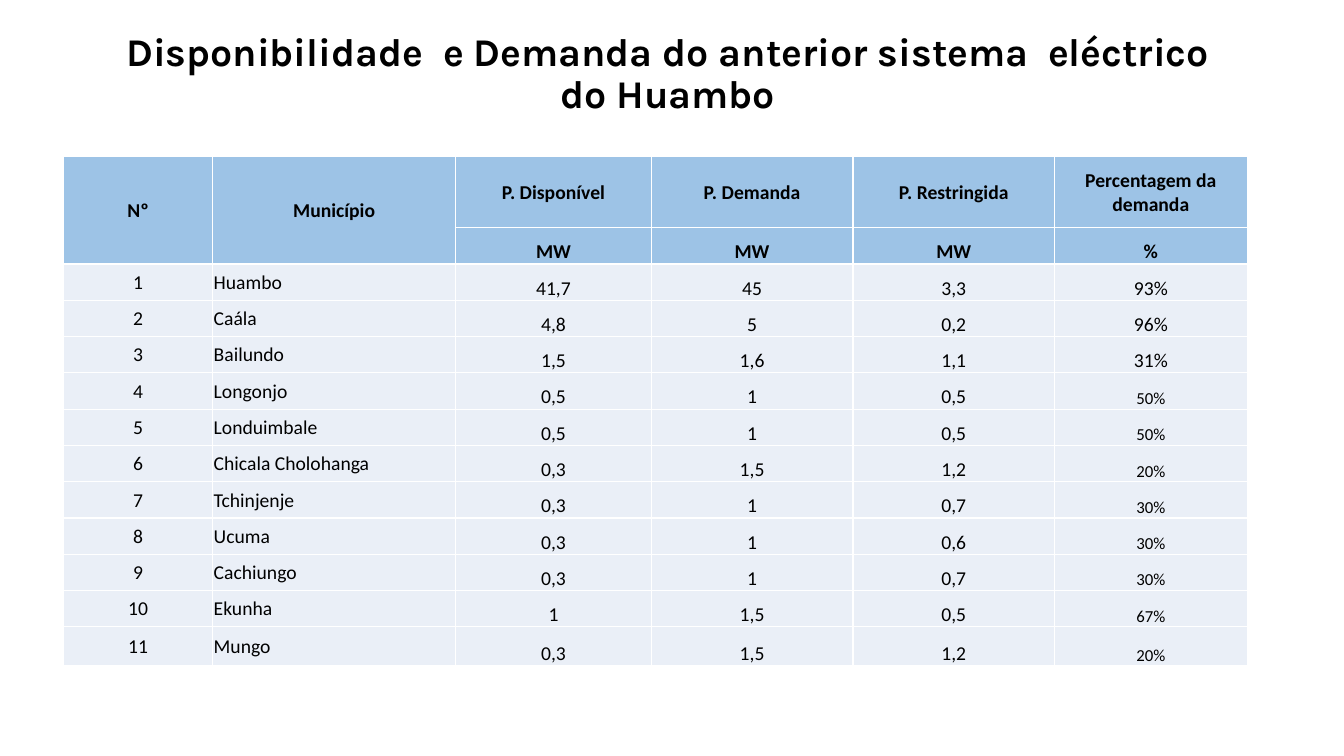
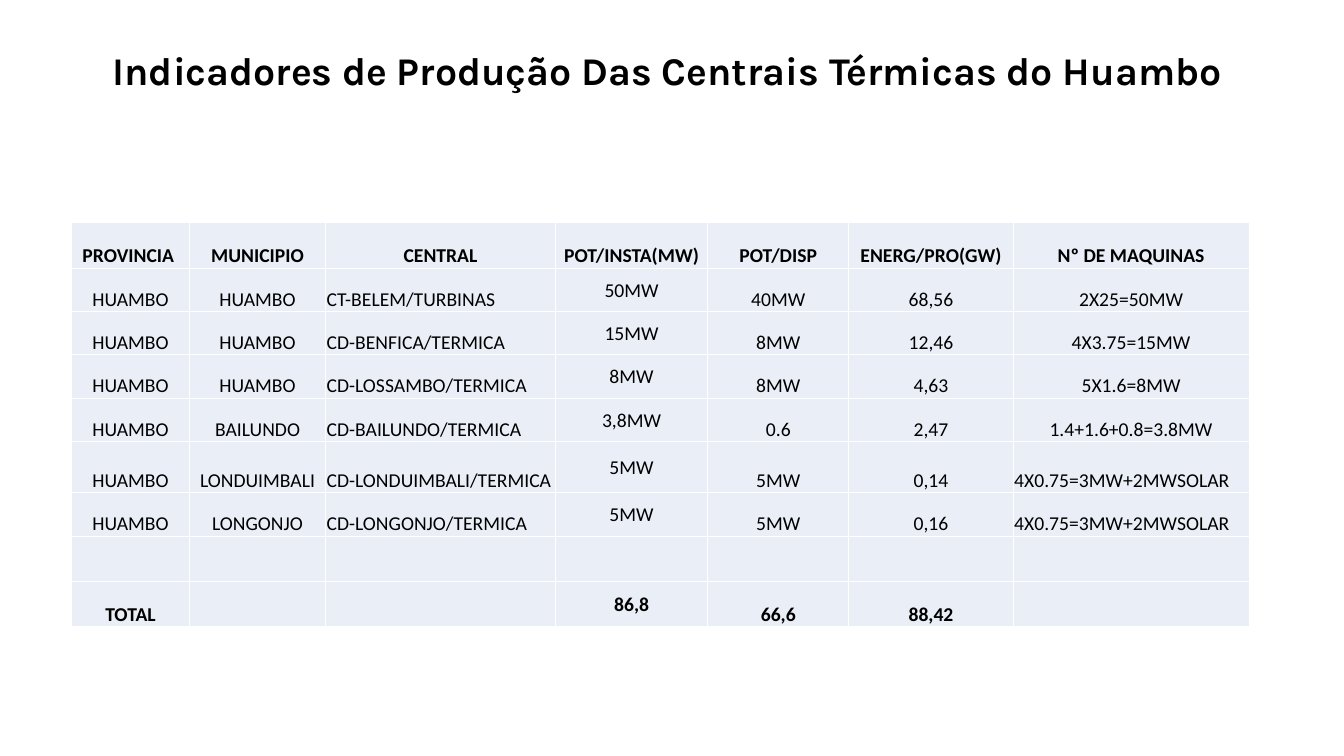
import pptx
import pptx.util
import pptx.dml.color
import pptx.enum.text
import pptx.oxml

Inches, Pt = pptx.util.Inches, pptx.util.Pt
ALIGN, ANCHOR = pptx.enum.text.PP_ALIGN, pptx.enum.text.MSO_ANCHOR
RGB = pptx.dml.color.RGBColor.from_string

COLORS = {"text": "000000", "header": "9DC3E6", "body": "EAEFF7", "border": "FFFFFF"}
FONTS = {"title": "Karla", "table": "Calibri"}

DEMAND_TITLE = "Disponibilidade  e Demanda do anterior sistema  eléctrico \vdo Huambo "
DEMAND_COLS = [1.48, 2.41, 1.94, 2, 2, 1.91]
DEMAND_HEIGHTS = [0.71] + [0.36] * 11 + [0.39]
DEMAND = [
    ("Nº", "Município", "P. Disponível", "P. Demanda", "P. Restringida", "Percentagem da demanda"),
    ("", "", "MW", "MW", "MW", "%"),
    ("1", "Huambo", "41,7", "45", "3,3", "93%"),
    ("2", "Caála", "4,8", "5", "0,2", "96%"),
    ("3", "Bailundo", "1,5", "1,6", "1,1", "31%"),
    ("4", "Longonjo", "0,5", "1", "0,5", "50%"),
    ("5", "Londuimbale", "0,5", "1", "0,5", "50%"),
    ("6", "Chicala Cholohanga", "0,3", "1,5", "1,2", "20%"),
    ("7", "Tchinjenje", "0,3", "1", "0,7", "30%"),
    ("8", "Ucuma", "0,3", "1", "0,6", "30%"),
    ("9", "Cachiungo", "0,3", "1", "0,7", "30%"),
    ("10", "Ekunha", "1", "1,5", "0,5", "67%"),
    ("11", "Mungo", "0,3", "1,5", "1,2", "20%"),
]

PLANTS_TITLE = "Indicadores de Produção Das Centrais Térmicas do Huambo "
PLANTS_COLS = [1.17, 1.35, 2.28, 1.51, 1.4, 1.63, 2.34]
PLANTS_HEIGHTS = [0.45, 0.43, 0.43, 0.43, 0.43, 0.51, 0.43, 0.45, 0.45]
PLANTS = [
    ("PROVINCIA ", "MUNICIPIO", "CENTRAL", "POT/INSTA(MW)", "POT/DISP", "ENERG/PRO(GW)",
     "Nº DE MAQUINAS"),
    ("HUAMBO", "HUAMBO", "CT-BELEM/TURBINAS", "50MW", "40MW", "68,56", "2X25=50MW"),
    ("HUAMBO", "HUAMBO", "CD-BENFICA/TERMICA", "15MW", "8MW", "12,46", "4X3.75=15MW"),
    ("HUAMBO", "HUAMBO", "CD-LOSSAMBO/TERMICA", "8MW", "8MW", "4,63", "5X1.6=8MW"),
    ("HUAMBO", "BAILUNDO", "CD-BAILUNDO/TERMICA", "3,8MW", "0.6", "2,47", "1.4+1.6+0.8=3.8MW"),
    ("HUAMBO", "LONDUIMBALI", "CD-LONDUIMBALI/TERMICA", "5MW", "5MW", "0,14",
     "4X0.75=3MW+2MWSOLAR"),
    ("HUAMBO", "LONGONJO", "CD-LONGONJO/TERMICA", "5MW", "5MW", "0,16", "4X0.75=3MW+2MWSOLAR"),
    ("",) * 7,
    ("TOTAL", "", "", "86,8", "66,6", "88,42", ""),
]


def demand_style(row, col, text):
    header = row < 2
    return {
        "fill": "header" if header else "body",
        "bold": header,
        "left": col == 1 and not header,
        "middle": row == 0 or col < 2,
        "size": 12 if col == 5 and row > 4 else 14,
    }


def plants_style(row, col, text):
    return {
        "fill": "body",
        "bold": row in (0, len(PLANTS) - 1),
        "left": row > 0 and (col == 2 or text.endswith("SOLAR")),
        "middle": row > 0 and col == 3,
        "size": 14,
    }


def set_font(p, name, size, bold):
    for r in p.runs:
        r.font.name, r.font.size, r.font.bold = name, Pt(size), bold
        r.font.color.rgb = RGB(COLORS["text"])


def add_borders(cell):
    tc_pr = cell._tc.get_or_add_tcPr()
    for i, side in enumerate("LRTB"):
        tc_pr.insert(i, pptx.oxml.parse_xml(
            f'<a:ln{side} xmlns:a="http://schemas.openxmlformats.org/drawingml/2006/main" '
            f'w="12700"><a:solidFill><a:srgbClr val="{COLORS["border"]}"/></a:solidFill></a:ln{side}>'))


def add_titled_slide(prs, title, left, top, width, height):
    s = prs.slides.add_slide(prs.slide_layouts[5])
    sp = s.shapes.title
    sp.left, sp.top, sp.width, sp.height = map(Inches, (left, top, width, height))
    tf = sp.text_frame
    tf.text = title
    tf.word_wrap = True
    tf.auto_size = pptx.enum.text.MSO_AUTO_SIZE.NONE
    tf.vertical_anchor = ANCHOR.MIDDLE
    p = tf.paragraphs[0]
    p.alignment, p.line_spacing = ALIGN.CENTER, 0.9
    set_font(p, FONTS["title"], 28, True)
    return s


def add_grid(s, left, top, cols, heights, rows, style):
    """Add a table; style(row, col, text) gives the look of each cell."""
    table = s.shapes.add_table(len(rows), len(cols), Inches(left), Inches(top),
                               Inches(sum(cols)), Inches(sum(heights))).table
    table.first_row = table.horz_banding = False
    for column, width in zip(table.columns, cols):
        column.width = Inches(width)
    for row, height in zip(table.rows, heights):
        row.height = Inches(height)
    for i, row in enumerate(rows):
        for j, text in enumerate(row):
            cell, look = table.cell(i, j), style(i, j, text)
            cell.fill.solid()
            cell.fill.fore_color.rgb = RGB(COLORS[look["fill"]])
            cell.margin_left = cell.margin_right = cell.margin_top = Inches(0.01)
            cell.margin_bottom = 0
            cell.vertical_anchor = ANCHOR.MIDDLE if look["middle"] else ANCHOR.BOTTOM
            add_borders(cell)
            if text:
                cell.text_frame.text = text
                p = cell.text_frame.paragraphs[0]
                p.alignment = ALIGN.LEFT if look["left"] else ALIGN.CENTER
                set_font(p, FONTS["table"], look["size"], look["bold"])
    return table


def main():
    prs = pptx.Presentation()
    prs.slide_width, prs.slide_height = Inches(13.33), Inches(7.5)

    s = add_titled_slide(prs, DEMAND_TITLE, 0.92, 0.02, 11.5, 1.45)
    table = add_grid(s, 0.63, 1.55, DEMAND_COLS, DEMAND_HEIGHTS, DEMAND, demand_style)
    for col in (0, 1):
        table.cell(0, col).merge(table.cell(1, col))

    s = add_titled_slide(prs, PLANTS_TITLE, 0, 0, 13.33, 1.45)
    add_grid(s, 0.71, 2.21, PLANTS_COLS, PLANTS_HEIGHTS, PLANTS, plants_style)

    prs.save("out.pptx")


if __name__ == "__main__":
    main()
